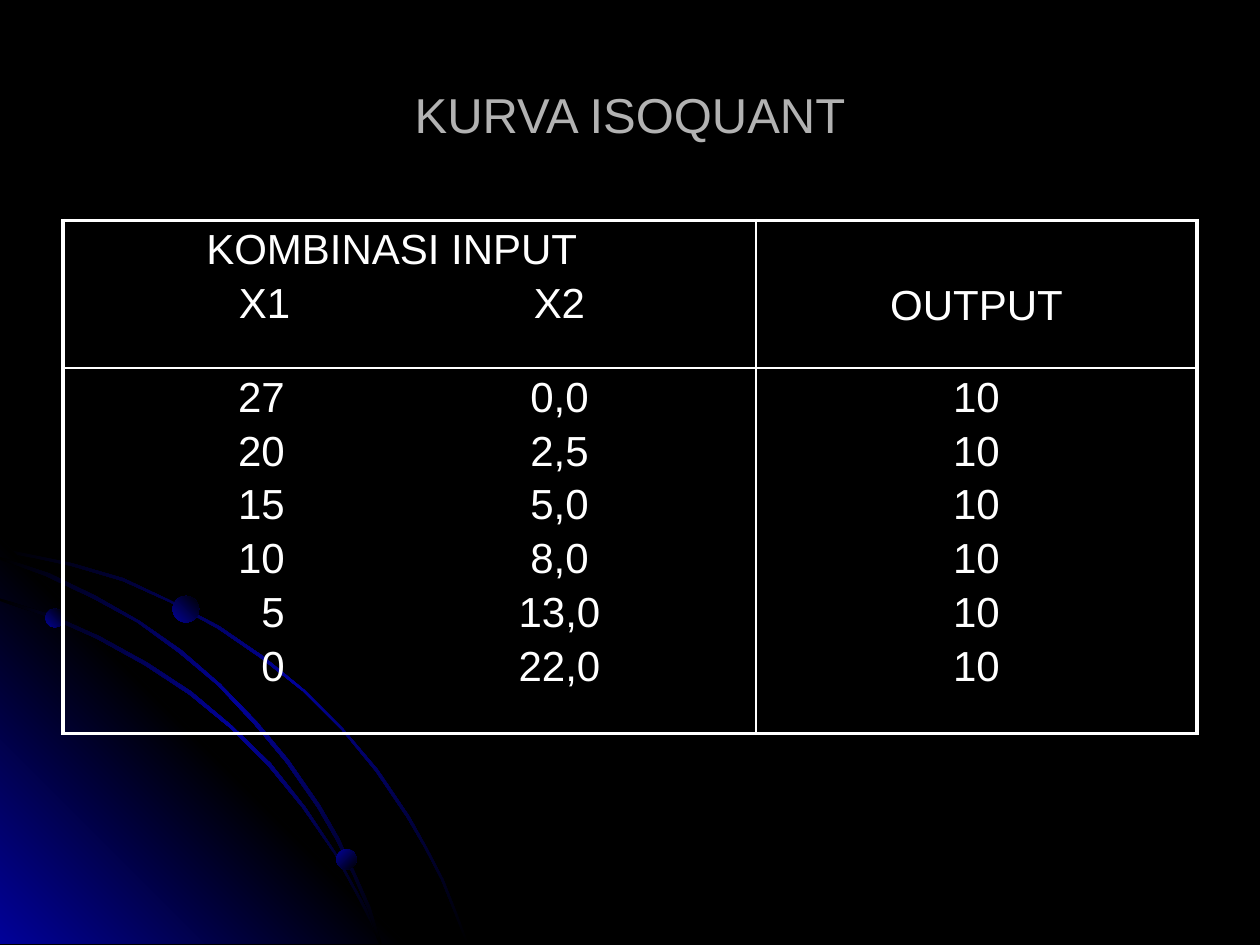
from dataclasses import dataclass

from lxml.etree import SubElement
from pptx import Presentation
from pptx.dml.color import RGBColor
from pptx.enum.shapes import MSO_SHAPE
from pptx.enum.text import MSO_ANCHOR, PP_ALIGN
from pptx.oxml.ns import qn
from pptx.util import Inches, Pt

BLACK = RGBColor(0x00, 0x00, 0x00)
BLUE = RGBColor(0x01, 0x01, 0x99)
WHITE = RGBColor(0xFF, 0xFF, 0xFF)
GRAY = RGBColor(0xB2, 0xB2, 0xB2)

UNIT = Inches(0.01)
COLUMNS, ROWS = 1000, 750
THICK, THIN = Pt(2.25), Pt(1)
GLOW = ((0, BLACK), (50, BLUE), (100, BLACK))
CORNER_FADE = ((0, BLUE), (50, BLACK), (100, BLUE))
ORB_FADE = ((0, BLUE), (100, BLACK))


@dataclass(frozen=True)
class Outline:
    points: tuple
    stops: tuple
    angle: int


@dataclass(frozen=True)
class Orb:
    left: int
    top: int
    size: int
    angle: int


@dataclass(frozen=True)
class TableCell:
    row: int
    column: int
    lines: tuple
    align: PP_ALIGN = PP_ALIGN.LEFT
    tabs: tuple = ()
    top_inset: int = 5


OUTLINES = (
    Outline((
        (57, 447), (28, 441), (0, 435), (0, 438), (28, 443), (56, 449), (97, 461),
        (135, 478), (173, 499), (208, 523), (241, 549), (271, 579), (298, 612),
        (323, 649), (337, 673), (350, 698), (360, 723), (370, 749), (372, 749),
        (362, 723), (352, 698), (339, 673), (325, 648), (300, 611), (272, 578),
        (242, 548), (209, 521), (174, 497), (136, 477), (98, 459)), GLOW, 45),
    Outline(((322, 749), (0, 749), (0, 427)), CORNER_FADE, 315),
    Outline((
        (285, 714), (294, 732), (301, 749), (303, 749), (296, 730), (286, 712),
        (266, 676), (242, 640), (215, 606), (184, 576), (152, 549), (117, 526),
        (79, 505), (41, 488), (0, 475), (0, 477), (39, 490), (77, 507), (115, 528),
        (150, 551), (183, 578), (213, 608), (240, 641), (265, 677)), GLOW, 45),
    Outline((
        (0, 442), (0, 444), (36, 457), (74, 475), (109, 494), (142, 518), (173, 544),
        (202, 575), (227, 605), (252, 641), (267, 667), (280, 694), (292, 722),
        (301, 749), (303, 749), (294, 720), (282, 693), (269, 665), (254, 639),
        (229, 603), (204, 573), (175, 543), (144, 516), (111, 493), (76, 473),
        (39, 455)), GLOW, 45),
)
ORBS = (Orb(36, 483, 15, 315), Orb(267, 674, 16, 45), Orb(137, 473, 21, 315))

COMBINATIONS = (("27", "0,0"), ("20", "2,5"), ("15", "5,0"),
                ("10", "8,0"), ("5", "13,0"), ("0", "22,0"))
CELLS = (
    TableCell(0, 0, ("\tKOMBINASI INPUT", "\tX1\tX2"),
              tabs=((("ctr", 251),), (("ctr", 150), ("ctr", 384)))),
    TableCell(0, 1, ("OUTPUT",), PP_ALIGN.CENTER, top_inset=49),
    TableCell(1, 0, tuple(f"\t{x1}\t{x2}" for x1, x2 in COMBINATIONS),
              tabs=((("r", 166), ("ctr", 384)),) * len(COMBINATIONS)),
    TableCell(1, 1, ("10",) * len(COMBINATIONS), PP_ALIGN.CENTER),
)


def fill_gradient(shape, stops: tuple, angle: int) -> None:
    shape.shadow.inherit = False
    shape.line.fill.background()
    shape.fill.gradient()
    gradient = shape.element.spPr.find(qn("a:gradFill"))
    for child in list(gradient):
        gradient.remove(child)
    stop_list = SubElement(gradient, qn("a:gsLst"))
    for position, color in stops:
        stop = SubElement(stop_list, qn("a:gs"), pos=str(position * 1000))
        SubElement(stop, qn("a:srgbClr"), val=str(color))
    SubElement(gradient, qn("a:lin"), ang=str(angle * 60000), scaled="0")


def draw_outline(slide, outline: Outline) -> None:
    start, *rest = outline.points
    builder = slide.shapes.build_freeform(*start, scale=UNIT)
    builder.add_line_segments(rest, close=True)
    fill_gradient(builder.convert_to_shape(), outline.stops, outline.angle)


def draw_orb(slide, orb: Orb) -> None:
    circle = slide.shapes.add_shape(
        MSO_SHAPE.OVAL, orb.left * UNIT, orb.top * UNIT, orb.size * UNIT, orb.size * UNIT)
    fill_gradient(circle, ORB_FADE, orb.angle)


def write_line(paragraph, text: str, *, size: int, color: RGBColor,
               align: PP_ALIGN, before: float = 0, tabs: tuple = ()) -> None:
    paragraph.alignment = align
    paragraph.space_before = Pt(before)
    if tabs:
        tab_list = SubElement(paragraph._p.get_or_add_pPr(), qn("a:tabLst"))
        for kind, position in tabs:
            SubElement(tab_list, qn("a:tab"), pos=str(position * UNIT), algn=kind)
    run = paragraph.add_run()
    run.text = text
    run.font.name = "Arial"
    run.font.size = Pt(size)
    run.font.color.rgb = color


def draw_borders(cell, widths: dict) -> None:
    properties = cell._tc.get_or_add_tcPr()
    for index, (side, width) in enumerate(widths.items()):
        border = SubElement(properties, qn(f"a:{side}"), w=str(width))
        color = SubElement(SubElement(border, qn("a:solidFill")), qn("a:srgbClr"))
        color.set("val", str(WHITE))
        properties.insert(index, border)


def fill_cell(table, content: TableCell) -> None:
    cell = table.cell(content.row, content.column)
    cell.fill.background()
    cell.margin_left = cell.margin_right = 10 * UNIT
    cell.margin_top, cell.margin_bottom = content.top_inset * UNIT, 5 * UNIT
    draw_borders(cell, {
        "lnL": THIN if content.column else THICK,
        "lnR": THICK if content.column else THIN,
        "lnT": THIN if content.row else THICK,
        "lnB": THICK if content.row else THIN})
    frame = cell.text_frame
    for index, text in enumerate(content.lines):
        paragraph = frame.add_paragraph() if index else frame.paragraphs[0]
        write_line(paragraph, text, size=24, color=WHITE, align=content.align,
                   before=4 if index else 0,
                   tabs=content.tabs[index] if content.tabs else ())


def draw_title(slide) -> None:
    title = slide.shapes.add_textbox(50 * UNIT, 28 * UNIT, 900 * UNIT, 125 * UNIT)
    title.text_frame.word_wrap = True
    title.text_frame.vertical_anchor = MSO_ANCHOR.MIDDLE
    write_line(title.text_frame.paragraphs[0], "KURVA ISOQUANT",
               size=28, color=GRAY, align=PP_ALIGN.CENTER)


def draw_table(slide) -> None:
    table = slide.shapes.add_table(
        2, 2, 50 * UNIT, 175 * UNIT, 900 * UNIT, 407 * UNIT).table
    table.first_row = table.horz_banding = False
    for column, width in zip(table.columns, (550, 350)):
        column.width = width * UNIT
    for row, height in zip(table.rows, (117, 290)):
        row.height = height * UNIT
    for content in CELLS:
        fill_cell(table, content)


def main() -> None:
    deck = Presentation()
    deck.slide_width, deck.slide_height = COLUMNS * UNIT, ROWS * UNIT
    slide = deck.slides.add_slide(deck.slide_layouts[6])
    slide.background.fill.solid()
    slide.background.fill.fore_color.rgb = BLACK
    for outline in OUTLINES:
        draw_outline(slide, outline)
    for orb in ORBS:
        draw_orb(slide, orb)
    draw_title(slide)
    draw_table(slide)
    deck.save("out.pptx")


if __name__ == "__main__":
    main()
